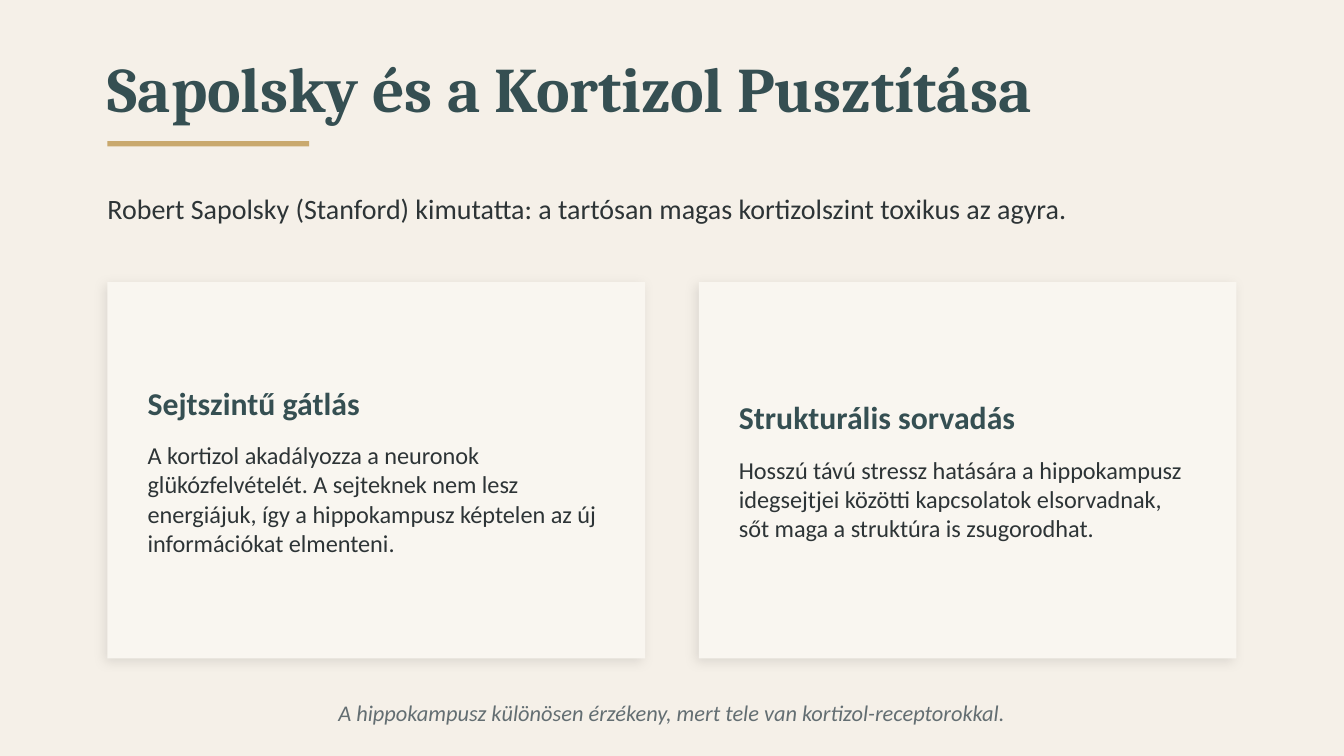
from lxml import etree
from pptx import Presentation
from pptx import util as u
from pptx.dml.color import RGBColor
from pptx.enum import shapes, text
from pptx.oxml import ns

COLORS = {
    "page": "F5F0E8", "card": "F9F6F0", "gold": "C9A96E",
    "head": "354F52", "body": "2D3436", "note": "636E72",
}
LEFT, WIDTH = 57.6, 604.8
CARD_W, CARD_H, CARD_TOP, GAP, PAD = 288, 201.6, 151.2, 28.8, 14.4

# Text formats
TITLE = {"name": "Cambria", "size": u.Pt(34), "bold": True, "color": "head"}
INTRO = {"name": "Calibri", "size": u.Pt(15), "color": "body"}
HEAD = {"name": "Calibri", "size": u.Pt(17), "bold": True, "color": "head"}
BODY = {"name": "Calibri", "size": u.Pt(13), "color": "body"}
NOTE = {"name": "Calibri", "size": u.Pt(12), "italic": True, "color": "note"}

CARDS = [
    ("Sejtszintű gátlás",
     "A kortizol akadályozza a neuronok glükózfelvételét. A sejteknek nem lesz "
     "energiájuk, így a hippokampusz képtelen az új információkat elmenteni."),
    ("Strukturális sorvadás",
     "Hosszú távú stressz hatására a hippokampusz idegsejtjei közötti "
     "kapcsolatok elsorvadnak, sőt maga a struktúra is zsugorodhat."),
]


def rgb(key):
    return RGBColor.from_string(COLORS[key])


def style(font, form):
    for key, val in form.items():
        if key == "color":
            font.color.rgb = rgb(val)
        else:
            setattr(font, key, val)


def set_frame(frame, inset=None):
    frame.word_wrap = True
    frame.auto_size = text.MSO_AUTO_SIZE.NONE
    frame.vertical_anchor = text.MSO_ANCHOR.MIDDLE
    if inset is not None:
        for side in ("left", "top", "right", "bottom"):
            setattr(frame, f"margin_{side}", u.Pt(inset))


def write(para, words, form, align=text.PP_ALIGN.LEFT):
    para.alignment = align
    run = para.add_run()
    run.text = words
    style(run.font, form)


def add_text(slide, box):
    return slide.shapes.add_textbox(*map(u.Pt, box)).text_frame


def add_line(slide, box, words, form, align=text.PP_ALIGN.LEFT):
    frame = add_text(slide, box)
    set_frame(frame, 0)
    write(frame.paragraphs[0], words, form, align)


def add_title(slide, box, words):
    title = slide.shapes.title
    for key, val in zip(("left", "top", "width", "height"), box):
        setattr(title, key, u.Pt(val))
    set_frame(title.text_frame, 0)
    write(title.text_frame.paragraphs[0], words, TITLE)


def add_rect(slide, box, fill):
    rect = slide.shapes.add_shape(shapes.MSO_SHAPE.RECTANGLE, *map(u.Pt, box))
    rect.shadow.inherit = False
    rect.fill.solid()
    rect.fill.fore_color.rgb = rgb(fill)
    rect.line.fill.background()
    return rect


def add_shade(shape):
    """Give the shape a soft black shadow at 10 % opacity."""
    effects = shape.element.spPr.find(ns.qn("a:effectLst"))
    shade = etree.SubElement(
        effects, ns.qn("a:outerShdw"), blurRad=str(u.Pt(6)), dist=str(u.Pt(2)),
        dir=str(135 * 60000), algn="bl", rotWithShape="0")
    tone = etree.SubElement(shade, ns.qn("a:srgbClr"), val="000000")
    etree.SubElement(tone, ns.qn("a:alpha"), val="10000")


def add_card(slide, left, head, body):
    add_shade(add_rect(slide, (left, CARD_TOP, CARD_W, CARD_H), "card"))
    frame = add_text(slide, (left + PAD, CARD_TOP + PAD,
                             CARD_W - 2 * PAD, CARD_H - 2 * PAD))
    set_frame(frame)
    write(frame.paragraphs[0], head, HEAD)
    frame.paragraphs[0].space_after = u.Pt(10)
    write(frame.add_paragraph(), body, BODY)


def main():
    deck = Presentation()
    deck.slide_width, deck.slide_height = u.Pt(720), u.Pt(405)
    slide = deck.slides.add_slide(deck.slide_layouts.get_by_name("Title Only"))
    slide.background.fill.solid()
    slide.background.fill.fore_color.rgb = rgb("page")

    # Title with its accent bar, then the intro
    add_title(slide, (LEFT, 21.6, WIDTH, 50.4), "Sapolsky és a Kortizol Pusztítása")
    add_rect(slide, (LEFT, 75.6, 108, 2.88), "gold")
    add_line(slide, (LEFT, 93.6, WIDTH, 36),
             "Robert Sapolsky (Stanford) kimutatta: a tartósan magas "
             "kortizolszint toxikus az agyra.", INTRO)

    # Two cards side by side
    for col, (head, body) in enumerate(CARDS):
        add_card(slide, LEFT + col * (CARD_W + GAP), head, body)

    # Closing note
    add_line(slide, (LEFT, 367.2, WIDTH, 28.8),
             "A hippokampusz különösen érzékeny, mert tele van "
             "kortizol-receptorokkal.", NOTE, text.PP_ALIGN.CENTER)

    deck.save("out.pptx")


if __name__ == "__main__":
    main()
